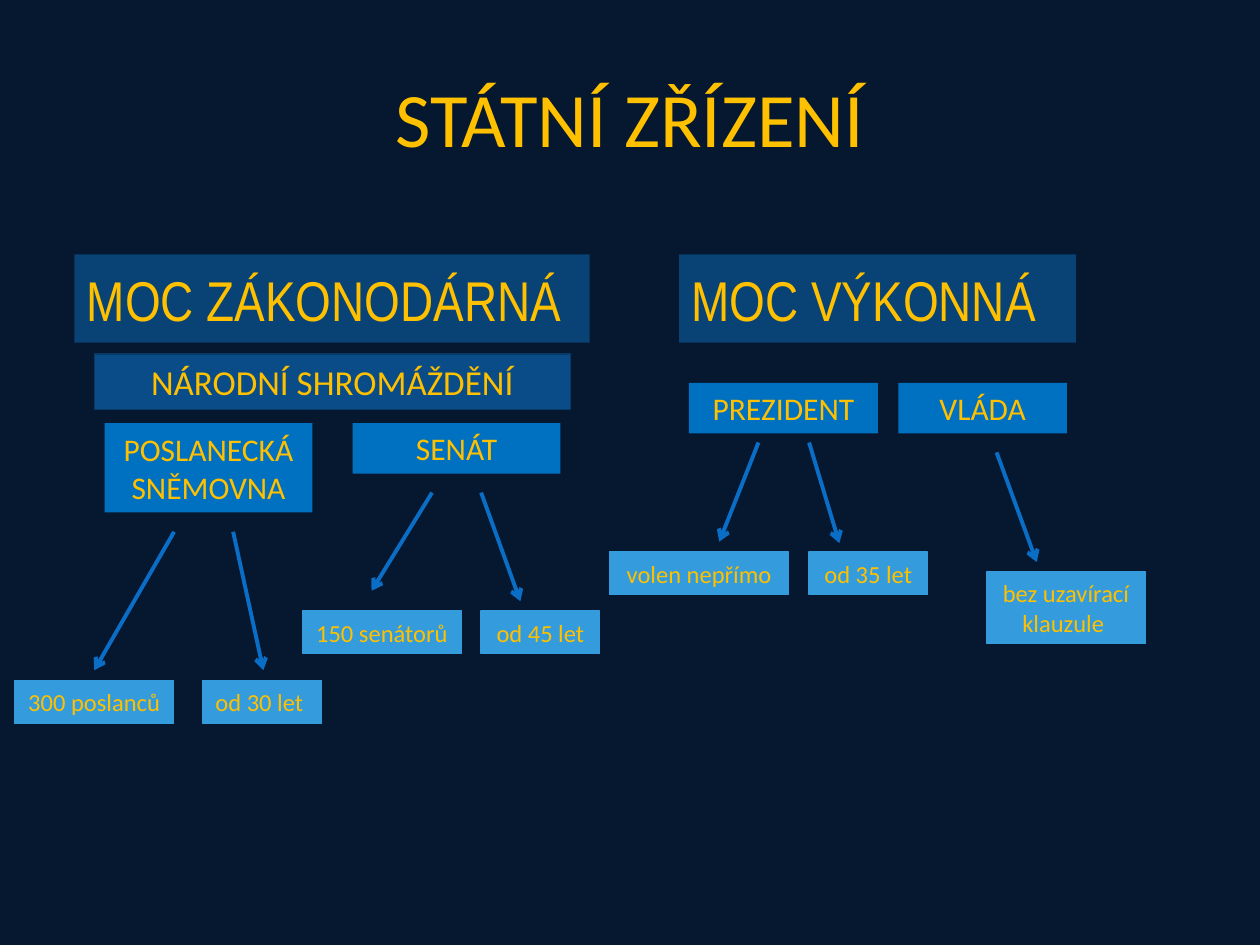
from lxml.etree import SubElement
from pptx import Presentation
from pptx.dml.color import RGBColor
from pptx.enum.shapes import MSO_CONNECTOR as Connector, MSO_SHAPE as Shape
from pptx.enum.text import MSO_ANCHOR as Anchor, PP_ALIGN as Align
from pptx.oxml.ns import qn
from pptx.util import Cm, Pt

GOLD = "FFC000"
TITLE = {"size": 44, "name": "Calibri"}
POWER = {"size": 32, "name": "Arial Narrow"}
ASSEMBLY = {"size": 20, "name": "Calibri"}
BODY = {"size": 18, "name": "Calibri"}
FACT = {"size": 14, "name": "Calibri"}

POWERS = [
    ("MOC VÝKONNÁ", 13.69, 5.13, 8, 1.78),
    ("MOC ZÁKONODÁRNÁ", 1.5, 5.13, 10.39, 1.78),
]
BODIES = [
    ("POSLANECKÁ SNĚMOVNA", 2.11, 8.53, 4.19, 1.8),
    ("SENÁT", 7.11, 8.53, 4.19, 1.02),
    ("PREZIDENT", 13.89, 7.72, 3.81, 1.02),
    ("VLÁDA", 18.11, 7.72, 3.4, 1.02),
]
FACTS = [
    ("300 poslanců", 0.3, 13.72, 3.2, 0.86),
    ("od 30 let ", 4.09, 13.72, 2.39, 0.86),
    ("150 senátorů", 6.1, 12.32, 3.2, 0.86),
    ("od 45 let", 9.7, 12.32, 2.39, 0.86),
    ("volen nepřímo", 12.29, 11.13, 3.61, 0.86),
    ("od 35 let", 16.31, 11.13, 2.39, 0.86),
    ("bez uzavírací klauzule ", 19.89, 11.53, 3.2, 1.45),
]
ARROWS = [
    (3.51, 10.72, 1.9, 13.51),
    (4.7, 10.72, 5.31, 13.51),
    (8.71, 9.93, 7.49, 11.91),
    (9.7, 9.93, 10.49, 12.12),
    (15.29, 8.92, 14.5, 10.92),
    (16.31, 8.92, 16.92, 10.95),
    (20.09, 9.12, 20.9, 11.33),
]


def color(value):
    return RGBColor.from_string(value)


def paint(fill, value):
    fill.solid()
    fill.fore_color.rgb = color(value)


def write(box, text, style, align):
    frame = box.text_frame
    frame.word_wrap = True
    frame.vertical_anchor = Anchor.MIDDLE
    para = frame.paragraphs[0]
    para.alignment = align
    span = para.add_run()
    span.text = text
    for key, value in style.items():
        setattr(span.font, key, Pt(value) if key == "size" else value)
    span.font.color.rgb = color(GOLD)


def add_title(page, text, *place):
    box = page.shapes.add_textbox(*map(Cm, place))
    write(box, text, TITLE, Align.CENTER)


def add_box(page, text, *place, style, fill, line=None, align=Align.CENTER):
    box = page.shapes.add_shape(Shape.RECTANGLE, *map(Cm, place))
    box.shadow.inherit = False
    paint(box.fill, fill)
    if line:
        paint(box.line.fill, line)
        box.line.width = Pt(0.75)
    else:
        box.line.fill.background()
    write(box, text, style, align)


def add_arrow(page, *ends):
    arrow = page.shapes.add_connector(Connector.STRAIGHT, *map(Cm, ends))
    paint(arrow.line.fill, "0A6DC6")
    arrow.line.width = Pt(2.25)
    properties = arrow.element.spPr
    SubElement(properties.find(qn("a:ln")), qn("a:tailEnd"), type="arrow")
    SubElement(properties, qn("a:effectLst"))


def main():
    deck = Presentation()
    deck.slide_width, deck.slide_height = Cm(25.4), Cm(19.05)
    page = deck.slides.add_slide(deck.slide_layouts[6])
    paint(page.background.fill, "061730")

    add_title(page, "STÁTNÍ ZŘÍZENÍ", 1.27, 0.76, 22.86, 3.18)
    for power in POWERS:
        add_box(page, *power, style=POWER, fill="094275", align=Align.LEFT)
    add_box(page, "NÁRODNÍ SHROMÁŽDĚNÍ", 1.9, 7.14, 9.6, 1.12,
            style=ASSEMBLY, fill="0A4C88", line="083A68")
    for body in BODIES:
        add_box(page, *body, style=BODY, fill="0070C0")
    for arrow in ARROWS:
        add_arrow(page, *arrow)
    for fact in FACTS:
        add_box(page, *fact, style=FACT, fill="349CDC", line="349CDC")

    deck.save("out.pptx")


if __name__ == "__main__":
    main()
